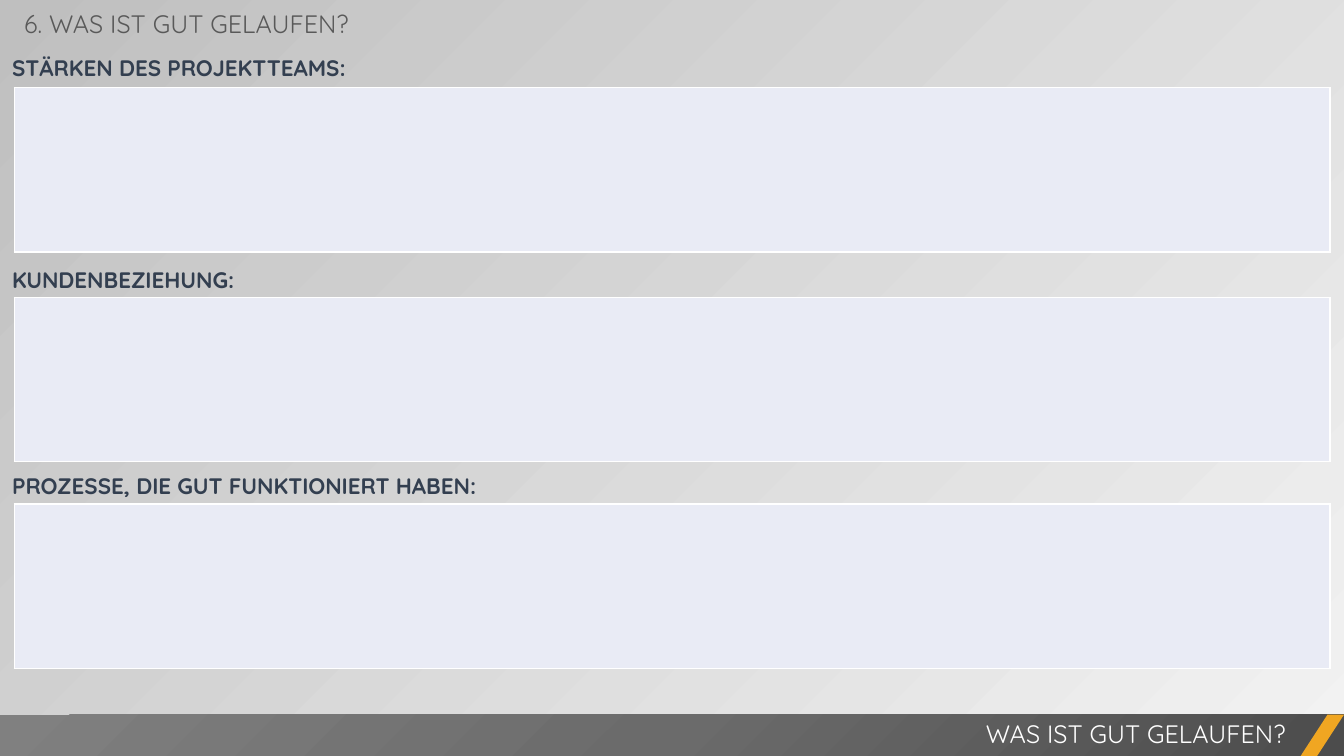
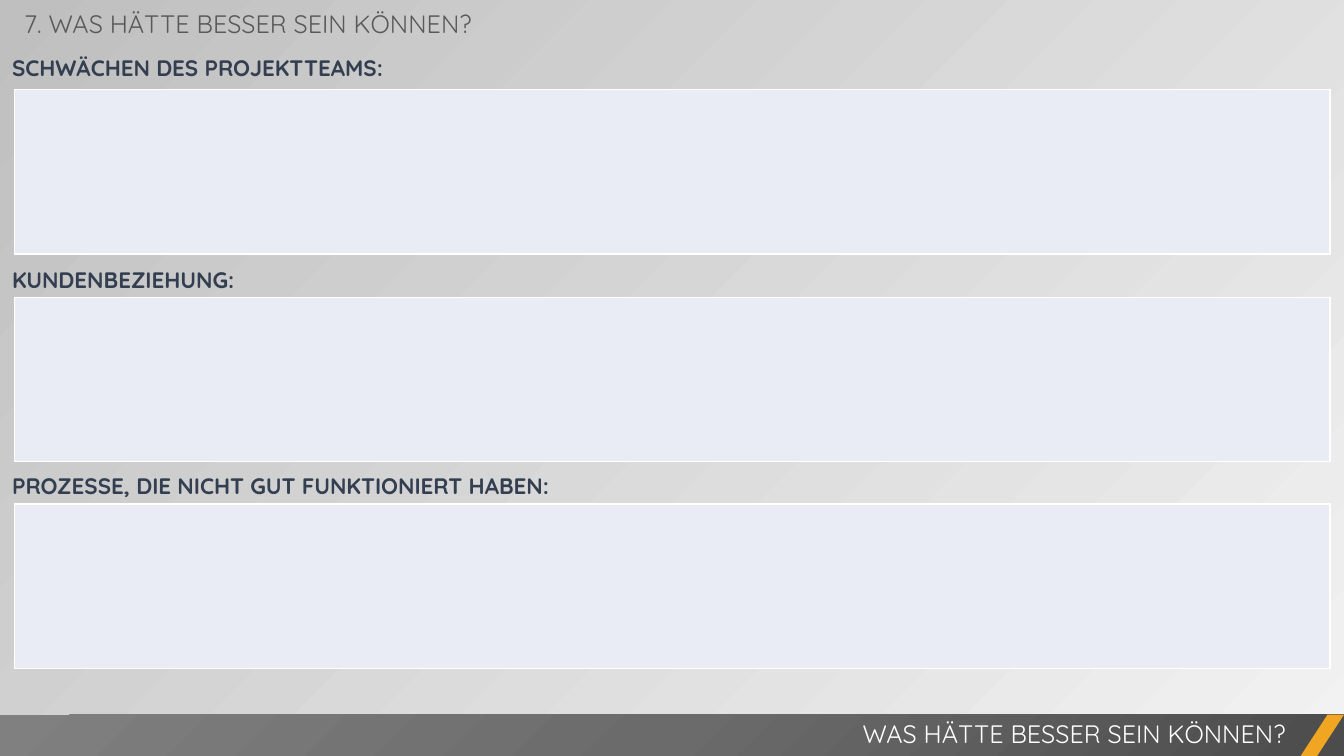
from lxml.etree import SubElement
from pptx import Presentation
from pptx.dml.color import RGBColor
from pptx.enum.shapes import MSO_SHAPE
from pptx.enum.text import MSO_ANCHOR, MSO_AUTO_SIZE, PP_ALIGN
from pptx.oxml import parse_xml
from pptx.oxml.ns import nsdecls, qn
from pptx.util import Inches, Pt

FONT = "Quicksand"
WHITE, NAVY, GREY = "FFFFFF", "333F50", "595959"
PANEL, ORANGE = "E9EBF5", "F0A622"
SLIDE_WIDTH, SLIDE_HEIGHT = 13.33, 7.5
FOOTER_BOX = (0, 7.09, SLIDE_WIDTH, 0.41)
TITLE_BOX = (0.14, 0.03, 5.31, 0.4)
LABEL_TOPS = (0.45, 2.55, 4.57)
LINE_SPACINGS = (Pt(21.5), Pt(21.5), 1.2)
BACKGROUND_STOPS = '<a:gs pos="0"><a:srgbClr val="F2F2F2"><a:alpha val="40000"/></a:srgbClr></a:gs>' \
    '<a:gs pos="100000"><a:srgbClr val="BFBFBF"/></a:gs>'
FOOTER_STOPS = "".join(
    f'<a:gs pos="{position}"><a:srgbClr val="{color}"/></a:gs>'
    for position, color in ((0, "4C4C4C"), (50000, "6B6B6B"), (100000, "808080")))

SLIDES = (
    ("6. WAS IST GUT GELAUFEN?", "WAS IST GUT GELAUFEN?", (0.87, 2.95, 5),
     ("STÄRKEN DES PROJEKTTEAMS:", "KUNDENBEZIEHUNG:",
      "PROZESSE, DIE GUT FUNKTIONIERT HABEN:")),
    ("7. WAS HÄTTE BESSER SEIN KÖNNEN?", "WAS HÄTTE BESSER SEIN KÖNNEN?", (0.89, 2.95, 5),
     ("SCHWÄCHEN DES PROJEKTTEAMS:", "KUNDENBEZIEHUNG:",
      "PROZESSE, DIE NICHT GUT FUNKTIONIERT HABEN:")),
)


def rgb(color):
    """Turn a hex string into a colour."""
    return RGBColor.from_string(color)


def inches(box):
    """Turn left, top, width and height into lengths."""
    return [Inches(value) for value in box]


def set_gradient(owner, fill, stops, direction):
    """Give the owner of a fill a gradient."""
    fill.solid()
    solid = owner.element.find(".//" + qn("a:solidFill"))
    gradient = parse_xml(
        f'<a:gradFill rotWithShape="1" {nsdecls("a")}><a:gsLst>{stops}</a:gsLst>{direction}</a:gradFill>')
    solid.getparent().replace(solid, gradient)


def write_text(shape, text, size, color, bold=False, align=PP_ALIGN.LEFT):
    """Write one formatted paragraph and return it."""
    frame = shape.text_frame
    frame.text = text
    frame.word_wrap = True
    frame.auto_size = MSO_AUTO_SIZE.SHAPE_TO_FIT_TEXT
    frame.vertical_anchor = MSO_ANCHOR.TOP
    paragraph = frame.paragraphs[0]
    paragraph.alignment = align
    font = paragraph.font
    font.name, font.size, font.bold = FONT, Pt(size), bold
    font.color.rgb = rgb(color)
    return paragraph


def add_plain_shape(slide, kind, box):
    """Add a shape without outline or shadow."""
    shape = slide.shapes.add_shape(kind, *inches(box))
    shape.shadow.inherit = False
    shape.line.fill.background()
    return shape


def add_title(slide, text, box):
    """Place the title placeholder."""
    title = slide.shapes.title
    title.left, title.top, title.width, title.height = inches(box)
    write_text(title, text, 18, GREY)


def add_label(slide, text, box, line_spacing):
    """Add the heading of a section."""
    label = slide.shapes.add_textbox(*inches(box))
    frame = label.text_frame
    frame.margin_left = frame.margin_right = Inches(0.12)
    frame.margin_top = frame.margin_bottom = Inches(0.06)
    paragraph = write_text(label, text, 16, NAVY, bold=True)
    paragraph.line_spacing = line_spacing
    paragraph.space_before = Pt(3.2)


def add_panel(slide, box):
    """Add an empty one-cell table with a white border."""
    table = slide.shapes.add_table(1, 1, *inches(box)).table
    table.first_row = table.horz_banding = False
    cell = table.cell(0, 0)
    properties = cell._tc.get_or_add_tcPr()
    for side in ("a:lnL", "a:lnR", "a:lnT", "a:lnB"):
        line = SubElement(properties, qn(side), w=str(Pt(1)))
        SubElement(SubElement(line, qn("a:solidFill")), qn("a:srgbClr"), val=WHITE)
    cell.fill.solid()
    cell.fill.fore_color.rgb = rgb(PANEL)


def add_footer(slide, text, box):
    """Add the dark band with its text and slanted accent."""
    left, top, width, height = box
    band = add_plain_shape(slide, MSO_SHAPE.RECTANGLE, box)
    set_gradient(band, band.fill, FOOTER_STOPS,
                 '<a:path path="circle"><a:fillToRect l="100000" t="100000"/></a:path>')
    caption = slide.shapes.add_textbox(*inches((left + width - 8.08, top - 0.01, 7.6, 0.4)))
    write_text(caption, text, 18, WHITE, align=PP_ALIGN.RIGHT)
    accent = add_plain_shape(slide, MSO_SHAPE.PARALLELOGRAM,
                             (left + width - 0.43, top, 0.43, height))
    accent.adjustments[0] = 0.65
    accent.fill.solid()
    accent.fill.fore_color.rgb = rgb(ORANGE)


def add_review_slide(presentation, title, caption, panel_tops, labels):
    """Add a slide with three labelled panels."""
    slide = presentation.slides.add_slide(presentation.slide_layouts[5])
    add_title(slide, title, TITLE_BOX)
    for label, label_top, panel_top, spacing in zip(labels, LABEL_TOPS, panel_tops, LINE_SPACINGS):
        add_panel(slide, (0.14, panel_top, 13.05, 1.63))
        add_label(slide, label, (0, label_top, 7.63, 0.4), spacing)
    add_footer(slide, caption, FOOTER_BOX)


def main():
    """Build and save the presentation."""
    presentation = Presentation()
    presentation.slide_width = Inches(SLIDE_WIDTH)
    presentation.slide_height = Inches(SLIDE_HEIGHT)
    master = presentation.slide_master
    set_gradient(master, master.background.fill, BACKGROUND_STOPS,
                 '<a:lin ang="13500000" scaled="0"/>')
    for content in SLIDES:
        add_review_slide(presentation, *content)
    presentation.save("out.pptx")


if __name__ == "__main__":
    main()
